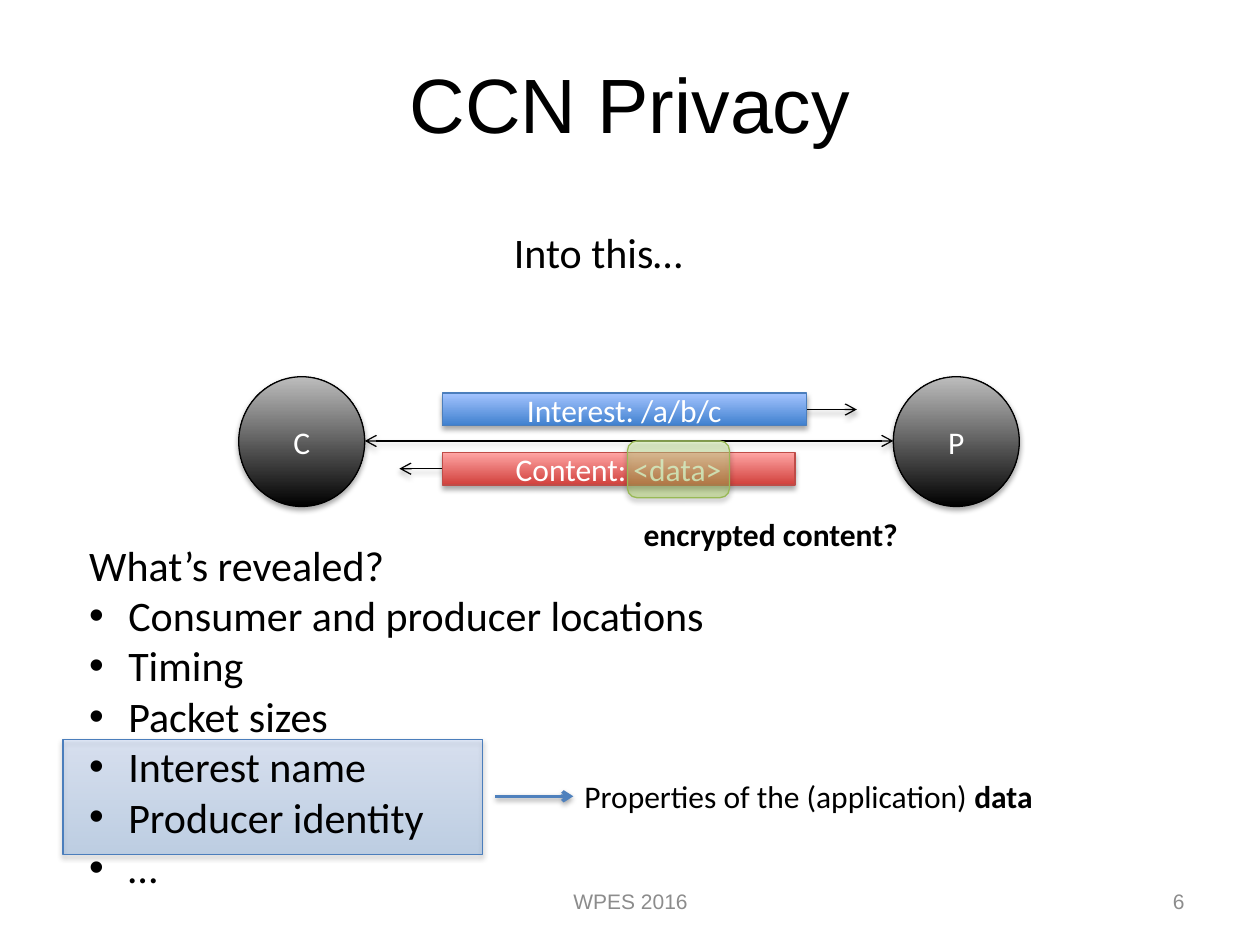
from dataclasses import dataclass

from lxml import etree
from pptx import Presentation
from pptx.dml.color import RGBColor
from pptx.enum.shapes import MSO_CONNECTOR, MSO_SHAPE
from pptx.enum.text import MSO_ANCHOR, MSO_AUTO_SIZE, PP_ALIGN
from pptx.oxml.ns import qn
from pptx.util import Inches, Pt

RECT, ROUND, OVAL = MSO_SHAPE.RECTANGLE, MSO_SHAPE.ROUNDED_RECTANGLE, MSO_SHAPE.OVAL
STRAIGHT, ELBOW = MSO_CONNECTOR.STRAIGHT, MSO_CONNECTOR.ELBOW
LEFT, CENTER, RIGHT = PP_ALIGN.LEFT, PP_ALIGN.CENTER, PP_ALIGN.RIGHT
TOP, MIDDLE = MSO_ANCHOR.TOP, MSO_ANCHOR.MIDDLE
SIDE_LEFT, SIDE_RIGHT = 1, 3

COLORS = {
    "black": "000000", "white": "FFFFFF", "grey": "8C8C8C", "silver": "BDBDBD",
    "blue": "3F80CE", "sky": "A4C4FF", "blue_edge": "4B7EBC", "arrow_blue": "4F81BD",
    "red": "D1403C", "pink": "FFA6A5", "red_edge": "BF4C48",
    "green": "A0CA4A", "lime": "DAFFA5", "green_edge": "98B955",
}
# Gradient themes: bottom colour, top colour, outline
THEMES = {
    "node": ("black", "silver", "black"),
    "interest": ("blue", "sky", "blue_edge"),
    "content": ("red", "pink", "red_edge"),
    "encrypted": ("green", "lime", "green_edge"),
}
UNIT = 0.1  # inches per grid column and row; the slide is 100 by 75


@dataclass(frozen=True)
class Block:
    """A gradient shape, placed in grid columns and rows."""
    kind: int
    theme: str
    col: float
    row: float
    cols: float
    rows: float
    label: str = ""
    opacity: int = 100

    @property
    def mid_row(self) -> float:
        return self.row + self.rows / 2


@dataclass(frozen=True)
class Caption:
    """A text box, placed in grid columns and rows."""
    spans: tuple
    col: float
    row: float
    cols: float
    rows: float
    size: int
    font: str = "Calibri"
    color: str = "black"
    align: int = LEFT
    anchor: int = TOP
    wrap: bool = False


HIGHLIGHT = Block(RECT, "interest", 5, 58.7, 33.3, 9.1, opacity=25)
CONSUMER = Block(OVAL, "node", 18.95, 29.9, 10, 10.3, "C")
PRODUCER = Block(OVAL, "node", 70.9, 29.9, 10, 10.3, "P")
INTEREST = Block(RECT, "interest", 35.1, 31.2, 28.9, 2.6, "Interest: /a/b/c")
CONTENT = Block(RECT, "content", 35.1, 35.9, 28, 2.6, "Content: <data>")
ENCRYPTION = Block(ROUND, "encrypted", 49.8, 35, 8.1, 4.5, opacity=40)

# Each span is (text, bold)
CAPTIONS = (
    Caption((("CCN Privacy", False),), 5, 4, 90, 12.5, 44, "Arial", align=CENTER, wrap=True),
    Caption((("WPES 2016", False),), 34.2, 69.5, 31.7, 4, 12, "Arial", "grey", CENTER, MIDDLE, True),
    Caption((("6", False),), 71.7, 69.5, 23.3, 4, 12, "Arial", "grey", RIGHT, MIDDLE, True),
    Caption((("Into this…", False),), 39.8, 17.5, 15.6, 5, 24),
    Caption((("encrypted content?", True),), 50.1, 40.4, 22.5, 4, 18),
    Caption((("Properties of the (application) ", False), ("data", True)), 45.4, 61.2, 38.1, 4, 18),
)
REVEALED = ("Consumer and producer locations", "Timing", "Packet sizes",
            "Interest name", "Producer identity", "…")


def grid(*units: float) -> list:
    return [Inches(unit * UNIT) for unit in units]


def rgb(name: str) -> RGBColor:
    return RGBColor.from_string(COLORS[name])


def add_shadow(properties) -> None:
    effects = properties.find(qn("a:effectLst"))
    if effects is None:
        effects = etree.SubElement(properties, qn("a:effectLst"))
    shadow = etree.SubElement(effects, qn("a:outerShdw"), blurRad=str(Pt(3.1)),
                              dist=str(Pt(1.8)), dir="5400000", rotWithShape="0")
    tone = etree.SubElement(shadow, qn("a:srgbClr"), val=COLORS["black"])
    etree.SubElement(tone, qn("a:alpha"), val="35000")


def write(para, text: str, *, size: int, font: str = "Calibri", color: str = "black",
          bold: bool = False, align: int = LEFT, bullet: bool = False) -> None:
    if bullet:
        properties = para._p.get_or_add_pPr()
        properties.set("marL", str(Inches(0.31)))
        properties.set("indent", str(Inches(-0.31)))
        etree.SubElement(properties, qn("a:buFont"), typeface="Arial")
        etree.SubElement(properties, qn("a:buChar"), char="•")
    para.alignment = align
    span = para.add_run()
    span.text = text
    span.font.size, span.font.name, span.font.bold = Pt(size), font, bold
    span.font.color.rgb = rgb(color)


def draw_block(page, block: Block):
    shape = page.shapes.add_shape(block.kind, *grid(block.col, block.row, block.cols, block.rows))
    bottom, top, edge = THEMES[block.theme]
    shape.fill.gradient()
    shape.fill.gradient_angle = 90
    for stop, name in zip(shape.fill.gradient_stops, (bottom, top)):
        stop.color.rgb = rgb(name)
    if block.opacity < 100:
        for tone in shape.element.spPr.iterfind(".//" + qn("a:gs") + "/" + qn("a:srgbClr")):
            etree.SubElement(tone, qn("a:alpha"), val=str(block.opacity * 1000))
    shape.line.color.rgb = rgb(edge)
    shape.line.width = Pt(0.75)
    shape.shadow.inherit = False
    add_shadow(shape.element.spPr)
    if block.label:
        shape.text_frame.vertical_anchor = MIDDLE
        write(shape.text_frame.paragraphs[0], block.label, size=18, color="white", align=CENTER)
    return shape


def draw_arrow(page, start: float, end: float, row: float, *, kind: int = STRAIGHT,
               color: str = "black", width: float = 0.75, ends: tuple = ("tailEnd",)):
    arrow = page.shapes.add_connector(kind, *grid(start, row, end, row))
    arrow.line.color.rgb = rgb(color)
    arrow.line.width = Pt(width)
    for end_name in ends:
        etree.SubElement(arrow.line._get_or_add_ln(), qn("a:" + end_name), type="arrow")
    add_shadow(arrow._element.spPr)
    return arrow


def add_frame(page, col: float, row: float, cols: float, rows: float, wrap: bool = False):
    frame = page.shapes.add_textbox(*grid(col, row, cols, rows)).text_frame
    frame.word_wrap = wrap
    frame.auto_size = MSO_AUTO_SIZE.NONE if wrap else MSO_AUTO_SIZE.SHAPE_TO_FIT_TEXT
    return frame


def draw_caption(page, caption: Caption) -> None:
    frame = add_frame(page, caption.col, caption.row, caption.cols, caption.rows, caption.wrap)
    frame.vertical_anchor = caption.anchor
    for text, bold in caption.spans:
        write(frame.paragraphs[0], text, size=caption.size, font=caption.font,
              color=caption.color, bold=bold, align=caption.align)


def main() -> None:
    deck = Presentation()
    deck.slide_width, deck.slide_height = Inches(10), Inches(7.5)
    page = deck.slides.add_slide(deck.slide_layouts[6])

    # Highlight behind the last list items
    draw_block(page, HIGHLIGHT)

    # Message arrows lie behind the bars they are joined to
    request = draw_arrow(page, INTEREST.col, 68, INTEREST.mid_row)
    reply = draw_arrow(page, 31.7, CONTENT.col + CONTENT.cols, CONTENT.mid_row, ends=("headEnd",))

    # Consumer, producer and the link between them
    draw_block(page, CONSUMER)
    draw_block(page, PRODUCER)
    draw_arrow(page, CONSUMER.col + CONSUMER.cols, PRODUCER.col, 35, kind=ELBOW,
               ends=("headEnd", "tailEnd"))

    # Messages
    request.begin_connect(draw_block(page, INTEREST), SIDE_LEFT)
    reply.end_connect(draw_block(page, CONTENT), SIDE_RIGHT)
    draw_block(page, ENCRYPTION)

    # Title, footer and captions
    for caption in CAPTIONS:
        draw_caption(page, caption)
    draw_arrow(page, 39.3, 45.5, 63.2, color="arrow_blue", width=2)

    # What an observer learns
    frame = add_frame(page, 6.1, 42.3, 51.2, 29.3)
    write(frame.paragraphs[0], "What’s revealed?", size=24)
    for item in REVEALED:
        write(frame.add_paragraph(), item, size=24, bullet=True)

    deck.save("out.pptx")


if __name__ == "__main__":
    main()
